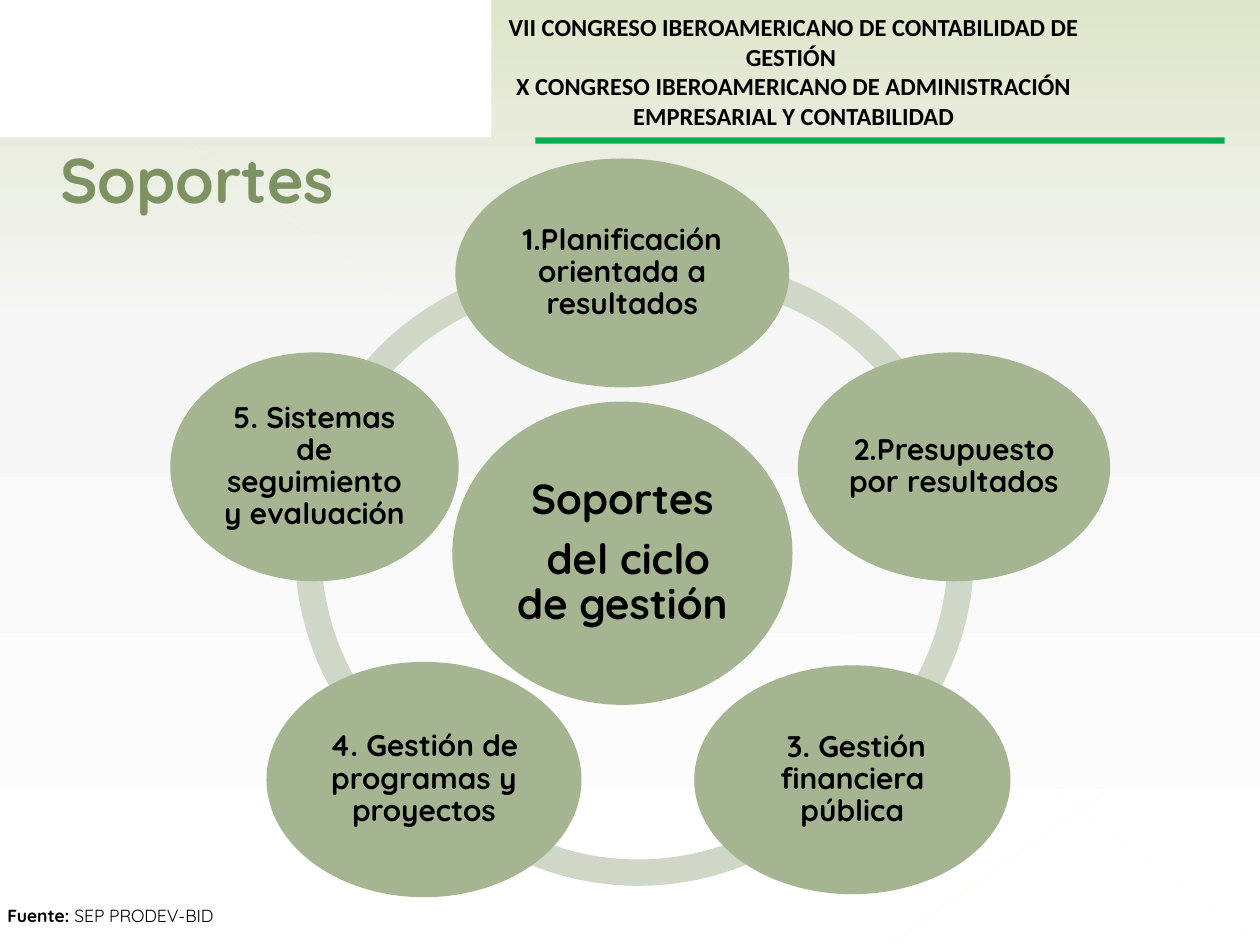
from copy import deepcopy
from typing import NamedTuple

from lxml.etree import SubElement
from pptx import Presentation
from pptx.dml.color import RGBColor
from pptx.enum.shapes import MSO_CONNECTOR, MSO_SHAPE
from pptx.enum.text import MSO_ANCHOR, PP_ALIGN
from pptx.oxml.ns import qn
from pptx.util import Pt

COLORS = {
    "white": "FFFFFF", "text": "000000", "rule": "00B050", "title": "7D9263",
    "node": "A5B592", "ring": "CFD7C7", "sky": "DFE5CA", "mist": "F6F6F6",
    "cream": "FFFDE3", "ivory": "FFFDE6",
}
HEAD_FONT, FONT = "Calibri", "Quicksand"
RING_SIZE = 327.6


class Arc(NamedTuple):
    left: float
    top: float
    start: float
    end: float


class Node(NamedTuple):
    left: float
    top: float
    width: float
    height: float
    lines: tuple[str, ...]
    size: float = 17
    inset: float = 1.5


class Ray(NamedTuple):
    x1: float
    y1: float
    x2: float
    y2: float
    color: str
    width: float
    alpha: int


ARCS = [
    Arc(168.5, 150.5, 118, 186),
    Arc(169.2, 149.8, 206, 254),
    Arc(200.9, 178.6, 62, 118),
    Arc(229, 152.6, 352, 62),
    Arc(227.5, 148.3, 286, 334),
]
NODES = [
    Node(258.5, 229.5, 194.4, 173.3, ("Soportes", " del ciclo de gestión"), 24, 2.2),
    Node(260.2, 90.6, 190.8, 130.8, ("1.Planificación orientada a resultados",)),
    Node(455.9, 201.4, 178.5, 130.8, ("2.Presupuesto por resultados",)),
    Node(396.7, 380.2, 180.7, 130.8, (" 3. Gestión financiera pública",)),
    Node(152.3, 378.2, 180, 134.5, ("4. Gestión de programas y proyectos",)),
    Node(97.3, 201.4, 164.8, 130.8, ("5. Sistemas de seguimiento y evaluación",)),
]
RAYS = [
    Ray(0, 0.7, 719.3, 539.3, "cream", 0.39, 35),
    Ray(720, 389.5, 509, 539.3, "ivory", 0.47, 45),
]


def rgb(name: str) -> RGBColor:
    """Return a palette colour."""
    return RGBColor.from_string(COLORS[name])


def add_run(p, text: str, *, size: float, font: str = FONT,
            color: str = "text", bold: bool = True) -> None:
    """Append formatted text to a paragraph."""
    r = p.add_run()
    r.text = text
    r.font.size, r.font.name, r.font.bold = Pt(size), font, bold
    r.font.color.rgb = rgb(color)


def add_shape(s, kind: MSO_SHAPE, left: float, top: float,
              width: float, height: float, color: str):
    """Draw a flat shape without outline."""
    sp = s.shapes.add_shape(kind, Pt(left), Pt(top), Pt(width), Pt(height))
    sp.shadow.inherit = False
    sp.fill.solid()
    sp.fill.fore_color.rgb = rgb(color)
    sp.line.fill.background()
    return sp


def add_box(s, left: float, top: float, width: float, height: float, wrap: bool = True):
    """Add a text box and return its frame."""
    tf = s.shapes.add_textbox(Pt(left), Pt(top), Pt(width), Pt(height)).text_frame
    tf.word_wrap = wrap
    return tf


def add_lines(tf, lines: tuple[str, ...], *, spacing: float = 1,
              after: float = 0, **fmt) -> None:
    """Write centred paragraphs into a frame."""
    for i, line in enumerate(lines):
        p = tf.add_paragraph() if i else tf.paragraphs[0]
        p.alignment = PP_ALIGN.CENTER
        p.line_spacing, p.space_after = spacing, Pt(after)
        add_run(p, line, **fmt)


def add_arc(s, arc: Arc) -> None:
    """Draw one segment of the ring."""
    sp = add_shape(s, MSO_SHAPE.BLOCK_ARC, arc.left, arc.top, RING_SIZE, RING_SIZE, "ring")
    for i, value in enumerate((arc.start * 0.6, arc.end * 0.6, 0.046)):
        sp.adjustments[i] = value


def add_node(s, node: Node) -> None:
    """Draw one labelled ellipse."""
    sp = add_shape(s, MSO_SHAPE.OVAL, *node[:4], "node")
    tf = sp.text_frame
    tf.word_wrap, tf.vertical_anchor = True, MSO_ANCHOR.MIDDLE
    tf.margin_left = tf.margin_right = tf.margin_top = tf.margin_bottom = Pt(node.inset)
    add_lines(tf, node.lines, spacing=0.9, after=round(node.size * 0.35, 1), size=node.size)


def add_ray(s, ray: Ray) -> None:
    """Draw a translucent hairline."""
    c = s.shapes.add_connector(MSO_CONNECTOR.STRAIGHT, *map(Pt, ray[:4]))
    c.line.color.rgb, c.line.width = rgb(ray.color), Pt(ray.width)
    clr = next(c.element.spPr.iter(qn("a:srgbClr")))
    SubElement(clr, qn("a:alpha")).set("val", str(ray.alpha * 1000))
    SubElement(c.element.spPr, qn("a:effectLst"))


def set_background(s) -> None:
    """Fill the background with a vertical gradient."""
    fill = s.background.fill
    fill.gradient()
    fill.gradient_angle = 270
    gs = next(s.element.iter(qn("a:gsLst")))
    gs.append(deepcopy(gs[-1]))
    for stop, (pos, name) in zip(fill.gradient_stops,
                                 ((0, "sky"), (0.34, "mist"), (1, "white"))):
        stop.position, stop.color.rgb = pos, rgb(name)


def main() -> None:
    """Build and save the slide."""
    prs = Presentation()
    prs.slide_width, prs.slide_height = Pt(720), Pt(540)
    s = prs.slides.add_slide(prs.slide_layouts[6])
    set_background(s)
    for ray in RAYS:
        add_ray(s, ray)
    add_shape(s, MSO_SHAPE.RECTANGLE, 0, 0, 280.8, 78.5, "white")
    add_shape(s, MSO_SHAPE.RECTANGLE, 306, 78.5, 393.8, 3.6, "rule")
    add_lines(add_box(s, 280.8, 3.6, 345.6, 74.9),
              ("VII CONGRESO IBEROAMERICANO DE CONTABILIDAD DE GESTIÓN ",
               "X CONGRESO IBEROAMERICANO DE ADMINISTRACIÓN EMPRESARIAL Y CONTABILIDAD"),
              size=14, font=HEAD_FONT)
    title = add_box(s, 27.4, 77, 666, 51.1)
    add_run(title.paragraphs[0], "Soportes", size=36, color="title")
    for arc in ARCS:
        add_arc(s, arc)
    for node in NODES:
        add_node(s, node)
    p = add_box(s, -2.9, 513.4, 132.5, 19.4, wrap=False).paragraphs[0]
    add_run(p, "Fuente: ", size=10)
    add_run(p, "SEP PRODEV-BID", size=10, bold=False)
    prs.save("out.pptx")


if __name__ == "__main__":
    main()
